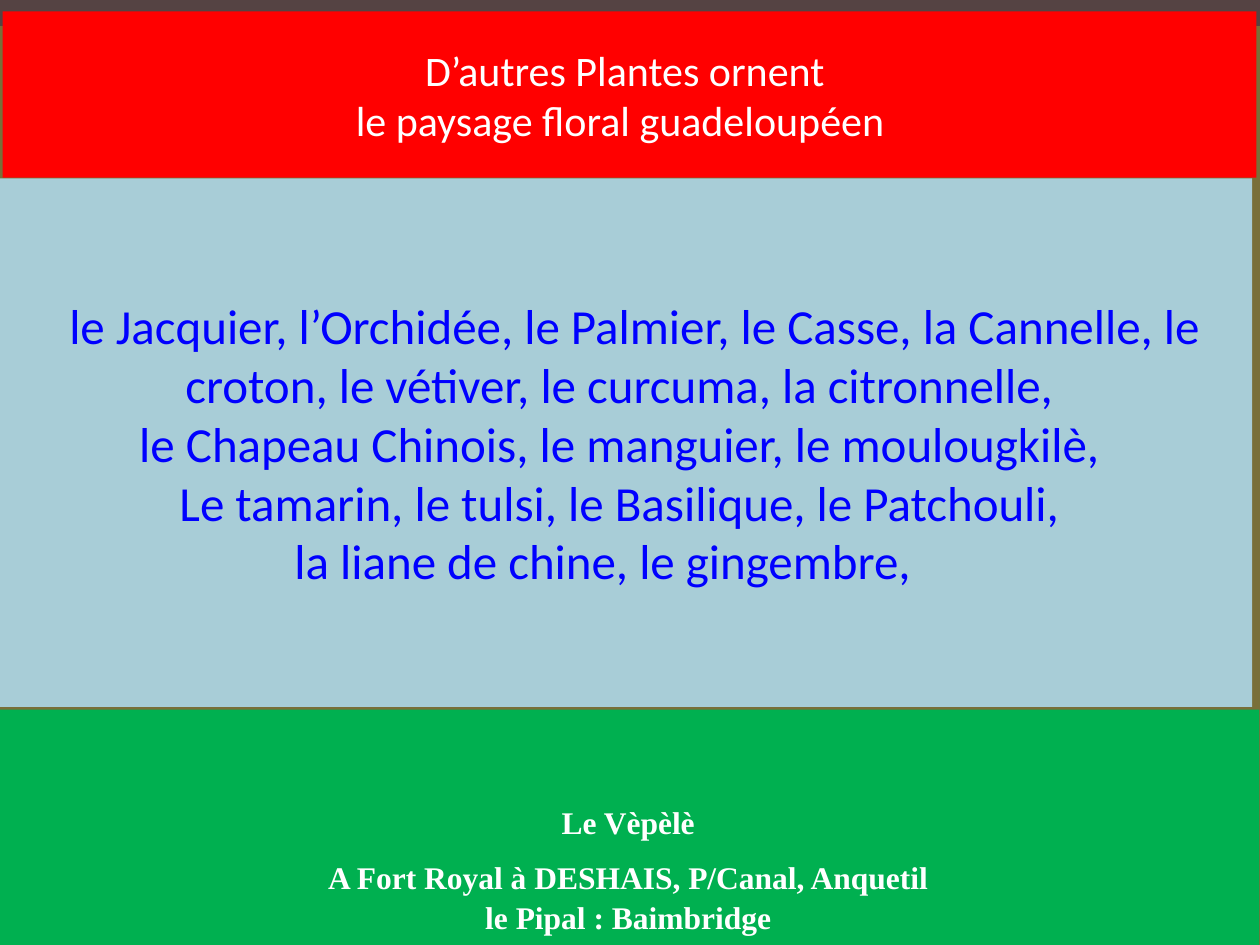
from pptx import Presentation
from pptx.dml.color import RGBColor
from pptx.enum.shapes import MSO_SHAPE
from pptx.enum.text import MSO_ANCHOR, PP_ALIGN
from pptx.util import Pt

RECT = MSO_SHAPE.RECTANGLE
MIDDLE = MSO_ANCHOR.MIDDLE
CENTER = PP_ALIGN.CENTER

DARK = RGBColor(0x55, 0x43, 0x43)
BROWN = RGBColor(0x79, 0x6F, 0x39)
RED = RGBColor(0xFF, 0x00, 0x00)
PALE_BLUE = RGBColor(0xA8, 0xCD, 0xD7)
GREEN = RGBColor(0x00, 0xB0, 0x50)
WHITE = RGBColor(0xFF, 0xFF, 0xFF)
BLUE = RGBColor(0x00, 0x00, 0xFF)

WIDTH, HEIGHT = 720, 540
TITLE = ["D’autres Plantes ornent ", "le paysage floral guadeloupéen "]
PLANTS = [
    "le Jacquier, l’Orchidée, le Palmier, le Casse, la Cannelle, "
    "le croton, le vétiver, le curcuma, la citronnelle, ",
    "le Chapeau Chinois, le manguier, le moulougkilè, ",
    "Le tamarin, le tulsi, le Basilique, le Patchouli, ",
    "la liane de chine, le gingembre, ",
]
PLACES = ["Le Vèpèlè",
          "A Fort Royal à DESHAIS, P/Canal, Anquetil\vle Pipal\u00a0: Baimbridge"]


def add_panel(slide, box, color):
    """Add a plain filled rectangle at box (left, top, width, height)."""
    sp = slide.shapes.add_shape(RECT, *map(Pt, box))
    sp.shadow.inherit = False
    sp.fill.solid()
    sp.fill.fore_color.rgb = color
    sp.line.fill.background()
    return sp


def write_lines(sp, lines, font, size, color, bold=False):
    """Write centred paragraphs in a panel and return them."""
    tf = sp.text_frame
    tf.word_wrap = True
    tf.vertical_anchor = MIDDLE
    for i, line in enumerate(lines):
        p = tf.paragraphs[0] if i == 0 else tf.add_paragraph()
        p.text = line
        p.alignment = CENTER
        p.font.name = font
        p.font.size = Pt(size)
        p.font.color.rgb = color
        p.font.bold = bold
    return tf.paragraphs


def add_backdrop(slide, box):
    """Draw the dark backdrop with the brown panel below its top strip."""
    left, top, width, height = box
    strip = 15
    add_panel(slide, box, DARK)
    add_panel(slide, (left, top + strip, width, height - strip), BROWN)


def add_title(slide, box):
    """Draw the red title band."""
    sp = add_panel(slide, box, RED)
    paragraphs = write_lines(sp, TITLE, "Calibri", 24, WHITE)
    paragraphs[-1]._p.get_or_add_pPr().set("marR", str(Pt(5.5)))


def add_plants(slide, box):
    """Draw the pale panel listing the plants."""
    sp = add_panel(slide, box, PALE_BLUE)
    paragraphs = write_lines(sp, PLANTS, "Calibri", 28, BLUE)
    paragraphs[0]._p.get_or_add_pPr().set("indent", str(Pt(11)))
    paragraphs[-1]._p.get_or_add_pPr().set("marR", str(Pt(19)))


def add_places(slide, box):
    """Draw the green panel naming the places."""
    sp = add_panel(slide, box, GREEN)
    sp.text_frame.margin_top = Pt(34)
    for p in write_lines(sp, PLACES, "Times New Roman", 18, WHITE, True):
        p.line_spacing = 1.07
        p.space_after = Pt(8)


def main():
    """Build the slide and save it."""
    prs = Presentation()
    prs.slide_width, prs.slide_height = Pt(WIDTH), Pt(HEIGHT)
    slide = prs.slides.add_slide(prs.slide_layouts[6])
    add_backdrop(slide, (0, 0, WIDTH, HEIGHT))
    add_title(slide, (1.5, 6.5, 716.5, 95))
    add_plants(slide, (-1.5, 102, 717, 302))
    add_places(slide, (-1.5, 405.5, 721, 151))
    prs.save("out.pptx")


if __name__ == "__main__":
    main()
